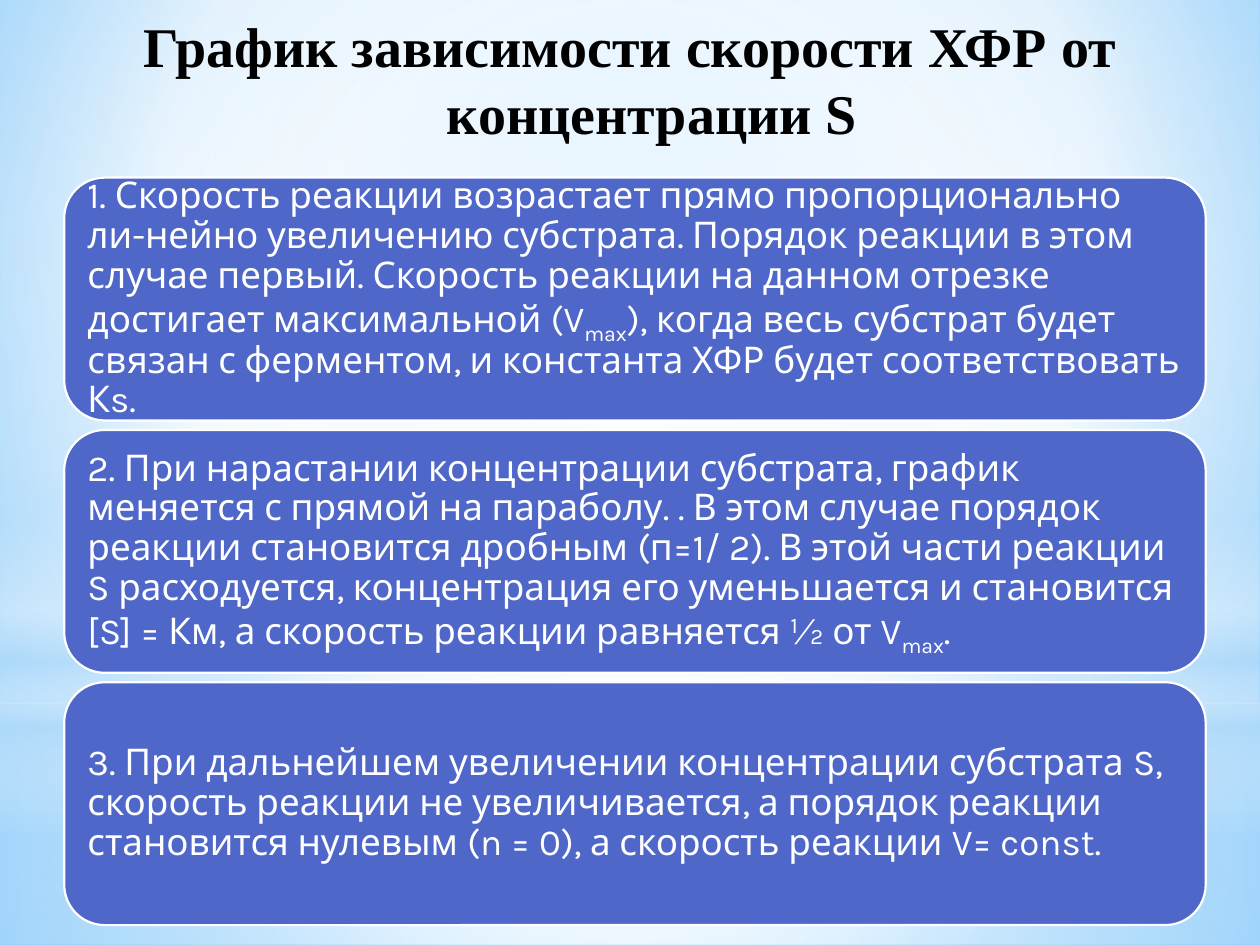
import dataclasses
import typing

import pptx
import pptx.dml.color
import pptx.enum.shapes
import pptx.enum.text
import pptx.oxml
import pptx.oxml.ns
import pptx.util

KIND = pptx.enum.shapes.MSO_SHAPE
ALIGN = pptx.enum.text.PP_ALIGN
WIDE, HIGH = 10, 7.5
Stop = tuple[int, str, int]


@dataclasses.dataclass(frozen=True)
class Theme:
    ink: str = "000000"
    card: str = "4E67C8"
    pale: str = "FFFFFF"
    mist: str = "B4DCFA"
    sky: str = "9ED5FF"
    deep: str = "5BB9FF"
    head: str = "Times New Roman"
    body: str = "Karla"
    big: float = 32
    text: float = 21
    edge: float = 1.25


@dataclasses.dataclass(frozen=True)
class Box:
    left: float
    top: float
    width: float
    height: float

    def place(self) -> list[int]:
        return [pptx.util.Inches(share * side) for share, side in
                zip((self.left, self.top, self.width, self.height), (WIDE, HIGH) * 2)]


@dataclasses.dataclass(frozen=True)
class Glow:
    box: Box
    stops: list[Stop]
    kind: typing.Any = KIND.RECTANGLE
    focus: typing.Optional[tuple[int, ...]] = (50, 50, 50, 50)


LOOK = Theme()
BACK = [(0, LOOK.sky, 100), (60, LOOK.pale, 100), (100, LOOK.deep, 100)]
GLOWS = [
    Glow(Box(0, 0.744, 1, 0.256),
         [(0, LOOK.pale, 91), (37, LOOK.pale, 76), (100, LOOK.mist, 79)]),
    Glow(Box(0, 0, 1, 0.744),
         [(0, LOOK.pale, 89), (48, LOOK.pale, 62), (100, LOOK.mist, 79)]),
    Glow(Box(0, 0.55, 1, 0.333),
         [(0, LOOK.pale, 0), (29, LOOK.pale, 30), (45, LOOK.mist, 40),
          (55, LOOK.pale, 26), (65, LOOK.mist, 60), (100, LOOK.pale, 0)], focus=None),
    Glow(Box(0, 0.233, 1, 0.744),
         [(0, LOOK.pale, 100), (56, LOOK.pale, 0)], KIND.OVAL),
]
TITLE = "График зависимости скорости ХФР от концентрации S"
CARDS = [
    "1. Скорость реакции возрастает прямо пропорционально ли-нейно увеличению "
    "субстрата. Порядок реакции в этом случае первый. Скорость реакции на данном "
    "отрезке достигает максимальной (V_max_), когда весь субстрат будет связан с "
    "ферментом, и константа ХФР будет соответствовать Кs.",
    "2. При нарастании концентрации субстрата, график меняется с прямой на параболу. "
    ". В этом случае порядок реакции становится дробным (п=1/ 2). В этой части реакции "
    "S расходуется, концентрация его уменьшается и становится [S] = Км, а скорость "
    "реакции равняется ½ от V_max_.",
    "3. При дальнейшем увеличении концентрации субстрата S, скорость реакции не "
    "увеличивается, а порядок реакции становится нулевым (n = 0), а скорость реакции "
    "V= const.",
]
FIRST = Box(0.051, 0.188, 0.906, 0.257)
STEP = 0.267


def tint(code: str) -> pptx.dml.color.RGBColor:
    return pptx.dml.color.RGBColor.from_string(code)


def blend(fill: typing.Any, host: typing.Any, stops: list[Stop],
          focus: typing.Optional[tuple[int, ...]]) -> None:
    fill.solid()
    marks = "".join(
        f'<a:gs pos="{pos * 1000}"><a:srgbClr val="{code}">'
        f'<a:alpha val="{alpha * 1000}"/></a:srgbClr></a:gs>'
        for pos, code, alpha in stops)
    if focus:
        sides = " ".join(f'{side}="{part * 1000}"' for side, part in zip("ltrb", focus))
        course = f'<a:path path="circle"><a:fillToRect {sides}/></a:path>'
    else:
        course = '<a:lin ang="5400000" scaled="0"/>'
    space = pptx.oxml.ns.nsdecls("a")
    grad = pptx.oxml.parse_xml(
        f'<a:gradFill {space} rotWithShape="1"><a:gsLst>{marks}</a:gsLst>{course}</a:gradFill>')
    plain = host.find(pptx.oxml.ns.qn("a:solidFill"))
    host.replace(plain, grad)


def write(frame: typing.Any, text: str, *, font: str, size: float, code: str,
          bold: bool = False, align: typing.Any = ALIGN.LEFT,
          lead: float = 1, inset: float = 0.1) -> None:
    frame.word_wrap = True
    frame.vertical_anchor = pptx.enum.text.MSO_ANCHOR.MIDDLE
    frame.margin_left = frame.margin_right = pptx.util.Inches(inset)
    frame.margin_top = frame.margin_bottom = pptx.util.Inches(min(inset, 0.09))
    line = frame.paragraphs[0]
    line.alignment = align
    line.line_spacing = lead
    for rank, part in enumerate(text.split("_")):
        run = line.add_run()
        run.text = part
        run.font.name = font
        run.font.size = pptx.util.Pt(size)
        run.font.bold = bold
        run.font.color.rgb = tint(code)
        if rank % 2:
            run.font._element.set("baseline", "-25000")


def shine(slide: typing.Any, glow: Glow) -> None:
    shape = slide.shapes.add_shape(glow.kind, *glow.box.place())
    shape.shadow.inherit = False
    shape.line.fill.background()
    blend(shape.fill, shape._element.spPr, glow.stops, glow.focus)


def card(slide: typing.Any, row: int, text: str) -> None:
    box = dataclasses.replace(FIRST, top=FIRST.top + row * STEP)
    shape = slide.shapes.add_shape(KIND.ROUNDED_RECTANGLE, *box.place())
    shape.shadow.inherit = False
    shape.fill.solid()
    shape.fill.fore_color.rgb = tint(LOOK.card)
    shape.line.color.rgb = tint(LOOK.pale)
    shape.line.width = pptx.util.Pt(LOOK.edge)
    write(shape.text_frame, text, font=LOOK.body, size=LOOK.text,
          code=LOOK.pale, lead=0.9, inset=0.09)


def head(slide: typing.Any) -> None:
    title = slide.shapes.title
    title.left, title.top, title.width, title.height = Box(0, 0, 1, 0.167).place()
    write(title.text_frame, TITLE, font=LOOK.head, size=LOOK.big,
          code=LOOK.ink, bold=True, align=ALIGN.CENTER)
    props = title.text_frame.paragraphs[0]._p.get_or_add_pPr()
    dent = pptx.util.Inches(0.35)
    props.set("marL", str(dent))
    props.set("indent", str(-dent))
    slide.shapes._spTree.append(title._element)


def main() -> None:
    deck = pptx.Presentation()
    deck.slide_width = pptx.util.Inches(WIDE)
    deck.slide_height = pptx.util.Inches(HIGH)
    slide = deck.slides.add_slide(deck.slide_layouts[5])
    fill = slide.background.fill
    fill.solid()
    host = slide._element.find(".//" + pptx.oxml.ns.qn("p:bgPr"))
    blend(fill, host, BACK, (20, 10, 20, 60))
    for glow in GLOWS:
        shine(slide, glow)
    head(slide)
    for row, text in enumerate(CARDS):
        card(slide, row, text)
    deck.save("out.pptx")


if __name__ == "__main__":
    main()
